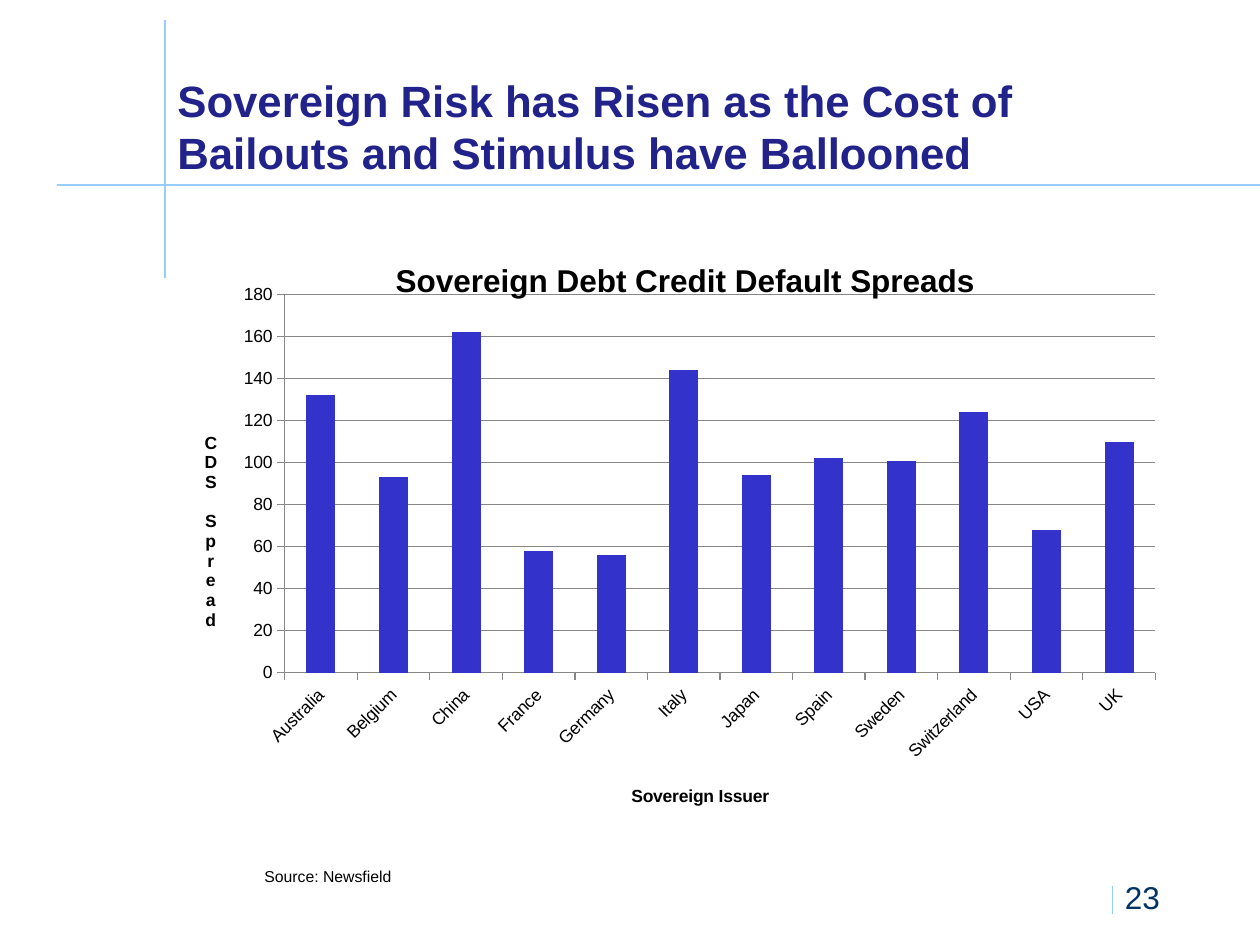
import pptx
import pptx.chart.data
import pptx.dml.color
import pptx.enum.chart
import pptx.enum.shapes
import pptx.enum.text
import pptx.oxml
import pptx.oxml.ns
import pptx.oxml.xmlchemy
import pptx.util

THEME = {
    "font": "Arial",
    "heading": "22228B",
    "number": "003366",
    "text": "000000",
    "rule": "99CCFF",
    "bar": "3333CC",
    "grid": "878787",
    "heading_size": 25,
    "chart_title_size": 18,
    "number_size": 18,
    "label_size": 10,
    "source_size": 9,
}
rgb = pptx.dml.color.RGBColor.from_string
qn = pptx.oxml.ns.qn


def write(frame, text, size="label_size", color="text", bold=False):
    paragraph = frame.paragraphs[0]
    run = paragraph.add_run()
    run.text = text
    run.font.name = THEME["font"]
    run.font.size = pptx.util.Pt(THEME[size])
    run.font.bold = bold
    run.font.color.rgb = rgb(THEME[color])


def set_layout(element, index, shares, target=None):
    for old in element.findall(qn("c:layout")):
        element.remove(old)
    layout = pptx.oxml.xmlchemy.OxmlElement("c:layout")
    manual = pptx.oxml.xmlchemy.OxmlElement("c:manualLayout")
    layout.append(manual)
    settings = [("layoutTarget", target)] if target else []
    settings += [("xMode", "edge"), ("yMode", "edge")]
    settings += list(zip("xywh", shares))
    for tag, value in settings:
        setting = pptx.oxml.xmlchemy.OxmlElement("c:" + tag)
        setting.set("val", str(value))
        manual.append(setting)
    element.insert(index, layout)


presentation = pptx.Presentation()
presentation.slide_width = pptx.util.Inches(10)
presentation.slide_height = pptx.util.Inches(7.5)
column = presentation.slide_width / 100
row = presentation.slide_height / 75
slide = presentation.slides.add_slide(presentation.slide_layouts[6])

rules = [
    (88.3, 70.3, 88.3, 72.5, 0.5),
    (4.5, 14.7, 100, 14.7, 1),
    (13.1, 22.1, 13.1, 1.6, 1),
]
for x1, y1, x2, y2, weight in rules:
    rule = slide.shapes.add_connector(
        pptx.enum.shapes.MSO_CONNECTOR.STRAIGHT,
        int(x1 * column), int(y1 * row), int(x2 * column), int(y2 * row))
    rule.line.color.rgb = rgb(THEME["rule"])
    rule.line.width = pptx.util.Pt(weight)
    rule._element.spPr.append(pptx.oxml.xmlchemy.OxmlElement("a:effectLst"))

top, middle = pptx.enum.text.MSO_ANCHOR.TOP, pptx.enum.text.MSO_ANCHOR.MIDDLE
passages = [
    ("23", (88.3, 69.2, 6.7, 4), top,
     {"size": "number_size", "color": "number"}),
    ("Sovereign Risk has Risen as the Cost of Bailouts and Stimulus have Ballooned",
     (13.1, 5, 80.4, 10), middle,
     {"size": "heading_size", "color": "heading", "bold": True}),
    ("Source: Newsfield", (20, 68.3, 25.8, 2.5), top, {"size": "source_size"}),
]
for text, (x, y, w, h), anchor, style in passages:
    passage = slide.shapes.add_textbox(
        int(x * column), int(y * row), int(w * column), int(h * row))
    passage.text_frame.word_wrap = True
    passage.text_frame.vertical_anchor = anchor
    write(passage.text_frame, text, **style)

spreads = {
    "Australia": 132, "Belgium": 93, "China": 162, "France": 58,
    "Germany": 56, "Italy": 144, "Japan": 94, "Spain": 102,
    "Sweden": 101, "Switzerland": 124, "USA": 68, "UK": 110,
}
spread_data = pptx.chart.data.CategoryChartData(number_format="#,##0")
spread_data.categories = list(spreads)
spread_data.add_series("CDS Spread", list(spreads.values()))
chart = slide.shapes.add_chart(
    pptx.enum.chart.XL_CHART_TYPE.COLUMN_CLUSTERED,
    int(14.4 * column), int(18.3 * row), int(78.8 * column), int(47.5 * row),
    spread_data).chart
chart.has_legend = False
chart.font.name = THEME["font"]
chart.font.size = pptx.util.Pt(THEME["label_size"])
chart.font.color.rgb = rgb(THEME["text"])

bars = chart.plots[0]
bars.vary_by_categories = False
bars.gap_width = 150
bars.series[0].format.fill.solid()
bars.series[0].format.fill.fore_color.rgb = rgb(THEME["bar"])

issuers, levels = chart.category_axis, chart.value_axis
levels.minimum_scale, levels.maximum_scale, levels.major_unit = 0, 180, 20
levels.tick_labels.number_format = "#,##0"
levels.tick_labels.number_format_is_linked = False
levels.has_major_gridlines = True
issuers.tick_labels.font.size = pptx.util.Pt(THEME["label_size"])
issuers._element.find(qn("c:txPr")).find(qn("a:bodyPr")).set("rot", "-2700000")
for axis in (issuers, levels):
    axis.major_tick_mark = pptx.enum.chart.XL_TICK_MARK.OUTSIDE
for line in (issuers.format.line, levels.format.line, levels.major_gridlines.format.line):
    line.color.rgb = rgb(THEME["grid"])
    line.width = pptx.util.Pt(0.75)

titles = [
    (chart.chart_title, "Sovereign Debt Credit Default Spreads", "chart_title_size", (0.21, 0.04)),
    (issuers.axis_title, "Sovereign Issuer", "label_size", (0.45, 0.92)),
    (levels.axis_title, "CDS Spread", "label_size", (0.02, 0.33)),
]
for title, text, size, position in titles:
    write(title.text_frame, text, size=size, bold=True)
    set_layout(title._element, 1, position)
stacked = levels.axis_title.text_frame._txBody.find(qn("a:bodyPr"))
stacked.set("rot", "0")
stacked.set("vert", "wordArtVert")
set_layout(chart._chartSpace.chart.plotArea, 0, (0.104, 0.107, 0.877, 0.632), "inner")

presentation.save("out.pptx")
